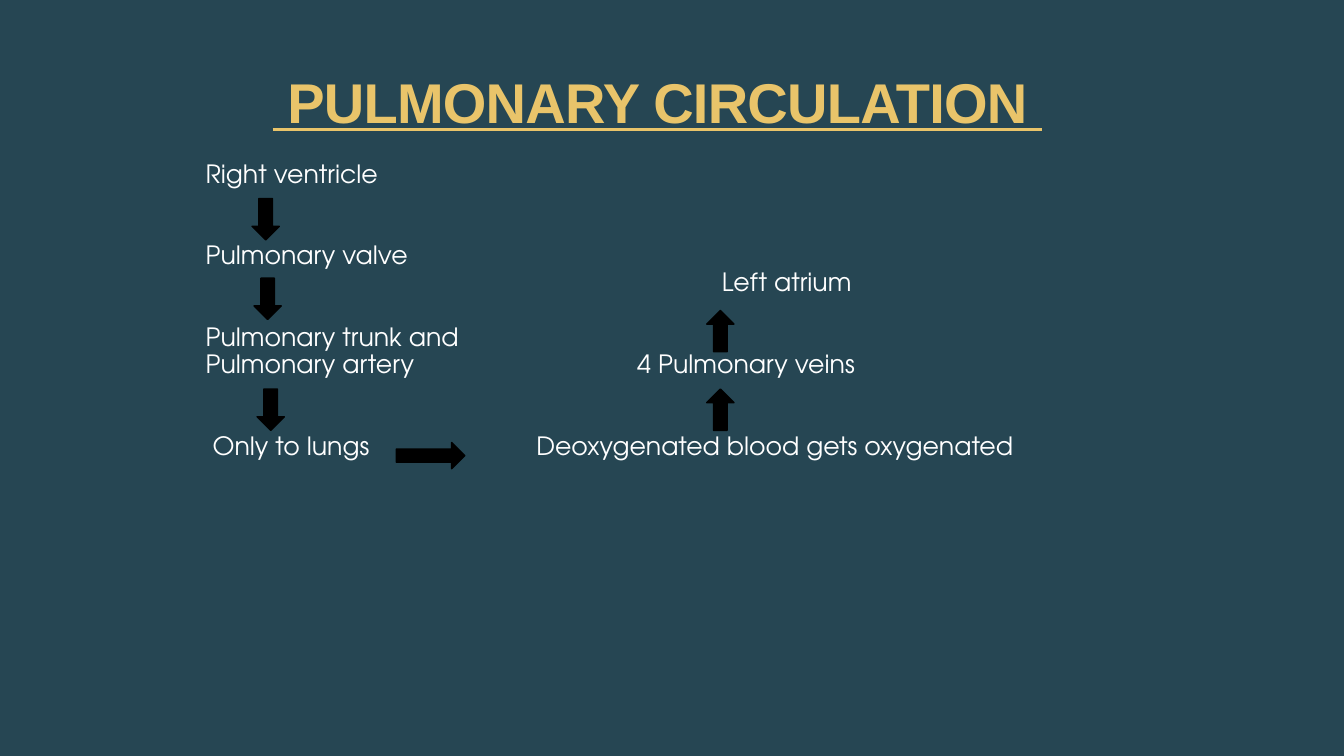
from pptx import Presentation
from pptx.dml.color import RGBColor
from pptx.enum.shapes import MSO_SHAPE
from pptx.enum.text import MSO_ANCHOR, MSO_AUTO_SIZE, PP_ALIGN
from pptx.util import Inches, Pt

DOWN, UP, RIGHT = MSO_SHAPE.DOWN_ARROW, MSO_SHAPE.UP_ARROW, MSO_SHAPE.RIGHT_ARROW
BOTTOM, TOP = MSO_ANCHOR.BOTTOM, MSO_ANCHOR.TOP
CENTER, LEFT = PP_ALIGN.CENTER, PP_ALIGN.LEFT
FIT_SHAPE, NO_FIT = MSO_AUTO_SIZE.SHAPE_TO_FIT_TEXT, MSO_AUTO_SIZE.NONE

# Content
TITLE = " PULMONARY CIRCULATION "
# Text lines, row on the line grid, left, width
STEPS = [
    (["Right ventricle"], 0, 2.04, 3),
    (["Pulmonary valve"], 3, 2.04, 3),
    (["Pulmonary trunk and", "Pulmonary artery"], 6, 2.04, 3),
    (["Only to lungs"], 10, 2.11, 2),
    (["Deoxygenated blood gets oxygenated"], 10, 5.32, 5.2),
    (["4 Pulmonary veins"], 7, 6.32, 3),
    (["Left atrium"], 4, 7.16, 2),
]
# Direction, left, top
ARROWS = [
    (DOWN, 2.5, 1.97),
    (DOWN, 2.52, 2.76),
    (DOWN, 2.55, 3.86),
    (RIGHT, 3.93, 4.39),
    (UP, 7.01, 3.86),
    (UP, 7.01, 3.08),
]
ARROW_SIZES = {DOWN: (0.27, 0.41), UP: (0.27, 0.41), RIGHT: (0.68, 0.26)}
FIRST_ROW, ROW_HEIGHT = 1.6, 0.27
COLORS = {"background": "264653", "title": "E9C46A", "text": "FFFFFF", "arrow": "000000"}


def color(name):
    return RGBColor.from_string(COLORS[name])


def place(shape, left, top, width, height):
    shape.left, shape.top = Inches(left), Inches(top)
    shape.width, shape.height = Inches(width), Inches(height)


def prepare_frame(text_frame, anchor, auto_size):
    text_frame.margin_left = text_frame.margin_right = 0
    text_frame.margin_top = text_frame.margin_bottom = 0
    text_frame.word_wrap = True
    text_frame.vertical_anchor = anchor
    text_frame.auto_size = auto_size


def style_run(run, font_name, size, color_name):
    run.font.name = font_name
    run.font.size = Pt(size)
    run.font.color.rgb = color(color_name)


def add_title(slide):
    title = slide.shapes.title
    place(title, 1.52, 0.67, 10, 0.67)
    prepare_frame(title.text_frame, BOTTOM, FIT_SHAPE)
    title.text_frame.text = TITLE
    paragraph = title.text_frame.paragraphs[0]
    paragraph.alignment = CENTER
    paragraph.line_spacing = 1.0
    run = paragraph.runs[0]
    style_run(run, "Arial", 40, "title")
    run.font.bold = run.font.underline = True
    run.font._element.set("spc", "-50")


def add_step(slide, lines, row, left, width):
    top = FIRST_ROW + row * ROW_HEIGHT
    box = slide.shapes.add_textbox(
        Inches(left), Inches(top), Inches(width), Inches(len(lines) * ROW_HEIGHT))
    prepare_frame(box.text_frame, TOP, NO_FIT)
    box.text_frame.text = "\n".join(lines)
    for paragraph in box.text_frame.paragraphs:
        paragraph.alignment = LEFT
        paragraph.line_spacing = 0.9
        style_run(paragraph.runs[0], "TeX Gyre Adventor", 18, "text")


def add_arrow(slide, direction, left, top):
    width, height = ARROW_SIZES[direction]
    arrow = slide.shapes.add_shape(
        direction, Inches(left), Inches(top), Inches(width), Inches(height))
    arrow.shadow.inherit = False
    arrow.fill.solid()
    arrow.fill.fore_color.rgb = color("arrow")
    arrow.line.color.rgb = color("arrow")
    arrow.line.width = Pt(1)


def main():
    presentation = Presentation()
    presentation.slide_width, presentation.slide_height = Inches(13.33), Inches(7.5)
    slide = presentation.slides.add_slide(presentation.slide_layouts[5])
    slide.background.fill.solid()
    slide.background.fill.fore_color.rgb = color("background")

    add_title(slide)
    # Stations of the blood flow
    for step in STEPS:
        add_step(slide, *step)
    # Flow direction
    for arrow in ARROWS:
        add_arrow(slide, *arrow)

    presentation.save("out.pptx")


if __name__ == "__main__":
    main()
